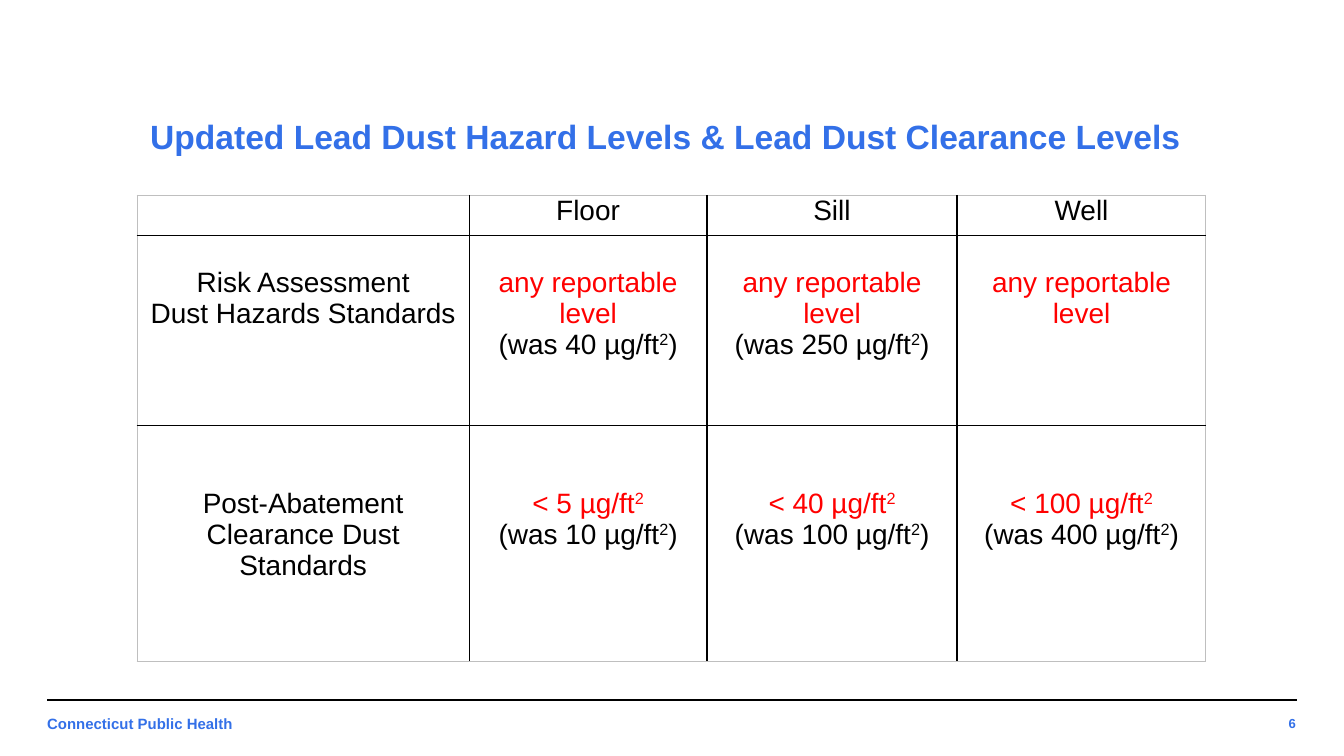
import pptx
import pptx.dml.color
import pptx.enum.shapes
import pptx.enum.text
import pptx.oxml.ns
import pptx.util
from lxml import etree

Cm, Pt = pptx.util.Cm, pptx.util.Pt
RGBColor = pptx.dml.color.RGBColor
ALIGN = pptx.enum.text.PP_ALIGN
ANCHOR = pptx.enum.text.MSO_ANCHOR
qn = pptx.oxml.ns.qn

BLUE = RGBColor(0x33, 0x70, 0xE8)
RED = RGBColor(0xFF, 0x00, 0x00)
BLACK = RGBColor(0x00, 0x00, 0x00)
WHITE = RGBColor(0xFF, 0xFF, 0xFF)
GREY = RGBColor(0xBF, 0xBF, 0xBF)

deck = pptx.Presentation()
deck.slide_width, deck.slide_height = Cm(25.4), Cm(14.29)
slide = deck.slides.add_slide(deck.slide_layouts[6])


def style(para, size, color, align, bold=False):
    para.alignment = align
    font = para.font
    font.name, font.size, font.bold = "Arial", Pt(size), bold
    font.color.rgb = color


def edge(cell, side, color, width):
    """Draw one cell border; side is L, R, T or B."""
    line = etree.SubElement(cell._tc.get_or_add_tcPr(), qn(f"a:ln{side}"), w=str(Pt(width)))
    fill = etree.SubElement(line, qn("a:solidFill"))
    etree.SubElement(fill, qn("a:srgbClr"), val=str(color))


# Title, footer and page number
labels = [
    ("Updated Lead Dust Hazard Levels & Lead Dust Clearance Levels",
     (2.59, 1.88, 20.5, 1.37), 18, ALIGN.LEFT, ANCHOR.MIDDLE),
    ("Connecticut Public Health", (0.64, 13.34, 8.33, 0.86), 8, ALIGN.LEFT, ANCHOR.TOP),
    ("6", (23.22, 13.36, 1.52, 0.64), 7, ALIGN.RIGHT, ANCHOR.MIDDLE),
]
for text, place, size, align, anchor in labels:
    frame = slide.shapes.add_textbox(*map(Cm, place)).text_frame
    frame.word_wrap = True
    frame.vertical_anchor = anchor
    frame.margin_left = frame.margin_right = Cm(0.25)
    frame.margin_top = frame.margin_bottom = Cm(0.25)
    frame.text = text
    style(frame.paragraphs[0], size, BLUE, align, bold=True)

rule = slide.shapes.add_connector(
    pptx.enum.shapes.MSO_CONNECTOR.STRAIGHT, Cm(24.51), Cm(13.23), Cm(0.89), Cm(13.23))
rule.line.color.rgb = BLACK
rule.line.width = Pt(0.75)
etree.SubElement(rule._element.spPr, qn("a:effectLst"))

# Table of levels: one list of paragraphs per cell, ² marks a raised 2
LEVEL = "any reportable level"
rows = [
    [[], ["Floor"], ["Sill"], ["Well"]],
    [["Risk Assessment", "Dust Hazards Standards"],
     [LEVEL, "(was 40 µg/ft²)"], [LEVEL, "(was 250 µg/ft²)"], [LEVEL]],
    [["Post-Abatement", "Clearance Dust Standards"],
     ["< 5 µg/ft²", "(was 10 µg/ft²)"],
     ["< 40 µg/ft²", "(was 100 µg/ft²)"],
     ["< 100 µg/ft²", "(was 400 µg/ft²)"]],
]
widths = [6.28, 4.49, 4.73, 4.7]
heights = [0.73, 3.59, 4.45]
table = slide.shapes.add_table(
    3, 4, Cm(2.59), Cm(3.69), Cm(sum(widths)), Cm(sum(heights))).table
table.first_row = table.horz_banding = False
for col, width in zip(table.columns, widths):
    col.width = Cm(width)
for row, height in zip(table.rows, heights):
    row.height = Cm(height)

for r, row in enumerate(rows):
    for c, lines in enumerate(row):
        cell = table.cell(r, c)
        cell.margin_left = cell.margin_right = Cm(0.15)
        cell.margin_top = Cm(0.59 * r)
        cell.margin_bottom = 0
        outer = {"L": c == 0, "R": c == 3, "T": r == 0, "B": r == 2}
        for side, rim in outer.items():
            edge(cell, side, GREY if rim else BLACK, 0.5 if rim else 1)
        cell.fill.solid()
        cell.fill.fore_color.rgb = WHITE
        for n, line in enumerate(lines):
            frame = cell.text_frame
            para = frame.add_paragraph() if n else frame.paragraphs[0]
            fresh = r > 0 and c > 0 and n == 0
            style(para, 15, RED if fresh else BLACK, ALIGN.CENTER)
            head, mark, tail = line.partition("²")
            para.add_run().text = head
            if mark:
                power = para.add_run()
                power.text = "2"
                power.font._element.set("baseline", "30000")
            if tail:
                para.add_run().text = tail

deck.save("out.pptx")
